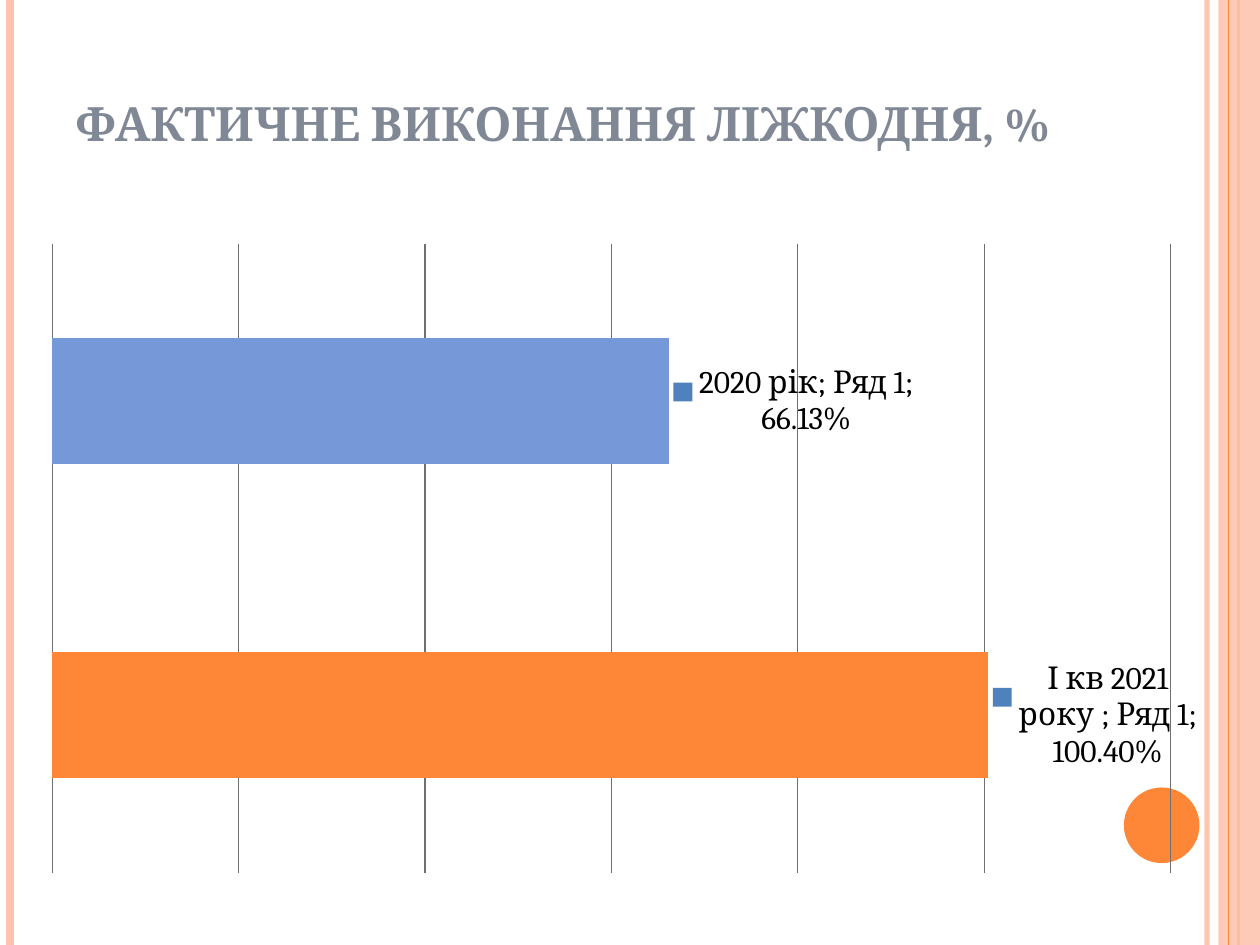
"""Builds the slide on actual bed-day performance with a bar chart."""
import lxml.etree
import pptx
import pptx.chart.data
import pptx.dml.color
import pptx.enum.chart
import pptx.enum.shapes
import pptx.enum.text
import pptx.oxml.ns
import pptx.util
from pptx.util import Inches

RGB = pptx.dml.color.RGBColor.from_string
qn = pptx.oxml.ns.qn
theme = {
    "font": "Cambria",
    "title_size": pptx.util.Pt(27),
    "chart_size": pptx.util.Pt(18),
    "title": RGB("818895"),
    "text": RGB("000000"),
    "grid": RGB("707070"),
    "orange": RGB("FE8637"),
    "peach": RGB("FEC3AE"),
    "blue": RGB("7598D9"),
}


def set_opacity(parent, percent):
    color = next(parent.iter(qn("a:srgbClr")))
    lxml.etree.SubElement(color, qn("a:alpha")).set("val", str(percent * 1000))


def add_stripe(x, color, width, opacity=100):
    stripe = slide.shapes.add_connector(
        pptx.enum.shapes.MSO_CONNECTOR.STRAIGHT, Inches(x), 0, Inches(x), prs.slide_height)
    stripe.line.color.rgb = color
    stripe.line.width = pptx.util.Pt(width)
    if opacity < 100:
        set_opacity(stripe.line._ln, opacity)
    lxml.etree.SubElement(stripe._element.spPr, qn("a:effectLst"))


prs = pptx.Presentation()
prs.slide_width, prs.slide_height = Inches(10), Inches(7.5)
slide = prs.slides.add_slide(prs.slide_layouts[5])

add_stripe(9.58, theme["peach"], 3, 93)
add_stripe(0.08, theme["peach"], 4.5)
add_stripe(9.83, theme["orange"], 1.5)

shape_kinds = pptx.enum.shapes.MSO_SHAPE
side_band = slide.shapes.add_shape(
    shape_kinds.RECTANGLE, Inches(9.67), 0, Inches(0.33), prs.slide_height)
add_stripe(9.75, theme["orange"], 0.75)
page_dot = slide.shapes.add_shape(
    shape_kinds.OVAL, Inches(8.92), Inches(6.25), Inches(0.6), Inches(0.6))
for ornament, color in ((side_band, theme["peach"]), (page_dot, theme["orange"])):
    ornament.shadow.inherit = False
    ornament.fill.solid()
    ornament.fill.fore_color.rgb = color
    ornament.line.fill.background()
set_opacity(side_band._element.spPr, 87)

heading = slide.shapes.title
heading.left, heading.top = Inches(0.5), Inches(0.3)
heading.width, heading.height = Inches(8.17), Inches(0.95)
heading.text_frame.word_wrap = True
heading.text_frame.vertical_anchor = pptx.enum.text.MSO_ANCHOR.BOTTOM
heading_line = heading.text_frame.paragraphs[0]
heading_line.alignment = pptx.enum.text.PP_ALIGN.LEFT
heading_run = heading_line.add_run()
heading_run.text = "ФАКТИЧНЕ ВИКОНАННЯ ЛІЖКОДНЯ, %"
heading_run.font.name = theme["font"]
heading_run.font.size = theme["title_size"]
heading_run.font.bold = True
heading_run.font.color.rgb = theme["title"]

performance = pptx.chart.data.CategoryChartData(number_format="0.00%")
performance.categories = ["І кв 2021 року ", "2020 рік"]
performance.add_series("Ряд 1", (1.004, 0.6613))
chart = slide.shapes.add_chart(
    pptx.enum.chart.XL_CHART_TYPE.BAR_CLUSTERED,
    Inches(0.23), Inches(1.83), Inches(9.27), Inches(5.2), performance).chart
chart.has_title = False
chart.has_legend = False
chart.font.name = theme["font"]
chart.font.size = theme["chart_size"]
chart.font.color.rgb = theme["text"]

chart.category_axis.visible = False
scale = chart.value_axis
scale.visible = False
scale.minimum_scale, scale.maximum_scale, scale.major_unit = 0, 1.2, 0.2
scale.has_major_gridlines = True
scale.major_gridlines.format.line.color.rgb = theme["grid"]
scale.major_gridlines.format.line.width = pptx.util.Pt(0.75)
scale.tick_labels.number_format = "0.00%"
scale.tick_labels.number_format_is_linked = False

bars = chart.plots[0]
bars.gap_width = 150
bars.vary_by_categories = False
for index, color in enumerate((theme["orange"], theme["blue"])):
    bar_fill = bars.series[0].points[index].format.fill
    bar_fill.solid()
    bar_fill.fore_color.rgb = color

labels = bars.series[0].data_labels
labels.number_format = "0.00%"
labels.number_format_is_linked = False
labels.position = pptx.enum.chart.XL_LABEL_POSITION.OUTSIDE_END
labels.show_legend_key = True
labels.show_value = True
labels.show_percentage = True
labels.show_category_name = True
labels.show_series_name = True
separator = lxml.etree.Element(qn("c:separator"))
separator.text = "; "
labels._element.find(qn("c:showBubbleSize")).addnext(separator)

prs.save("out.pptx")
